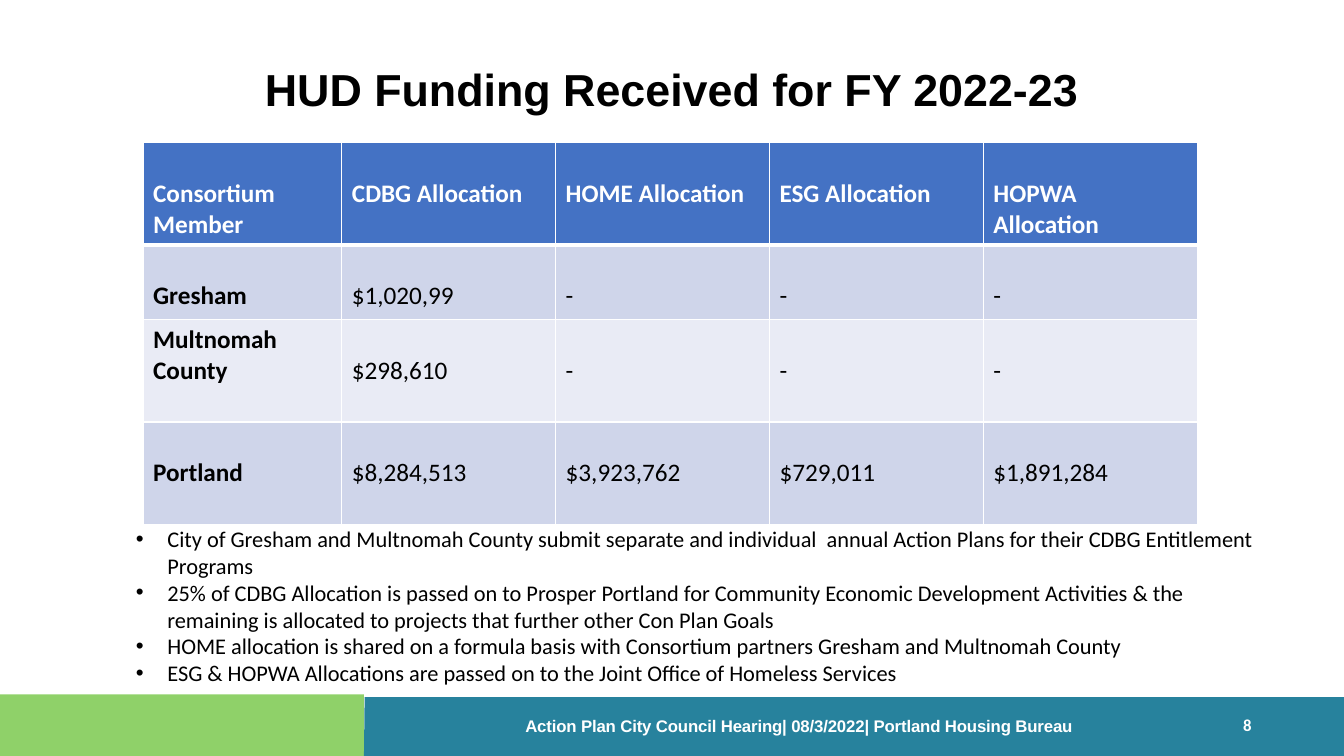
from pptx import Presentation
from pptx import util as u
from pptx.dml.color import RGBColor
from pptx.enum import shapes, text
from pptx.oxml import parse_xml
from pptx.oxml.ns import nsdecls

WHITE = RGBColor(0xFF, 0xFF, 0xFF)
BLACK = RGBColor(0x00, 0x00, 0x00)
BLUE = RGBColor(0x44, 0x72, 0xC4)
BAND_DARK = RGBColor(0xCF, 0xD5, 0xEA)
BAND_LIGHT = RGBColor(0xE9, 0xEB, 0xF5)
GREEN = RGBColor(0x8F, 0xD1, 0x69)
TEAL = RGBColor(0x27, 0x82, 0x9D)

ALLOCATIONS = [
    ["Consortium Member", "CDBG Allocation", "HOME Allocation", "ESG Allocation", "HOPWA Allocation"],
    ["Gresham", "$1,020,99", "-", "-", "-"],
    ["Multnomah County", "$298,610", "-", "-", "-"],
    ["Portland", "$8,284,513", "$3,923,762", "$729,011", "$1,891,284"],
]
ROW_FILLS = [BLUE, BAND_DARK, BAND_LIGHT, BAND_DARK]
ROW_HEIGHTS = [73, 53.5, 73, 73]
NOTES = [
    "City of Gresham and Multnomah County submit separate and individual  annual Action Plans "
    "for their CDBG Entitlement Programs",
    "25% of CDBG Allocation is passed on to Prosper Portland for Community Economic Development "
    "Activities & the remaining is allocated to projects that further other Con Plan Goals",
    "HOME allocation is shared on a formula basis with Consortium partners Gresham and Multnomah County",
    "ESG & HOPWA Allocations are passed on to the Joint Office of Homeless Services",
]


def set_all(target, values):
    """Set each named attribute of the target."""
    for name, value in values.items():
        setattr(target, name, value)


def write(para, wording, color, **font):
    """Add one formatted run to a paragraph."""
    span = para.add_run()
    span.text = wording
    set_all(span.font, font)
    span.font.color.rgb = color
    return span


def add_text_box(page, box, **frame_format):
    """Add a wrapping text box and return its frame."""
    frame = page.shapes.add_textbox(*map(u.Pt, box)).text_frame
    set_all(frame, {"word_wrap": True, **frame_format})
    return frame


def add_title(page, box):
    """Place the centred heading."""
    frame = add_text_box(page, box, vertical_anchor=text.MSO_ANCHOR.MIDDLE)
    para = frame.paragraphs[0]
    set_all(para, {"alignment": text.PP_ALIGN.CENTER, "line_spacing": 0.9})
    write(para, "HUD Funding Received for FY 2022-23", BLACK, name="Arial", size=u.Pt(32), bold=True)


def add_borders(cell, bottom):
    """Draw white borders round a cell, with the bottom width given in points."""
    for side, width in {"L": 1, "R": 1, "T": 1, "B": bottom}.items():
        cell._tc.get_or_add_tcPr().append(parse_xml(
            f'<a:ln{side} {nsdecls("a")} w="{u.Pt(width)}"><a:solidFill>'
            f'<a:srgbClr val="{WHITE}"/></a:solidFill></a:ln{side}>'))


def add_allocations(page, box):
    """Place the funding table with a narrower first column."""
    left, top, width, height = box
    first = 142
    count = len(ALLOCATIONS[0])
    table = page.shapes.add_table(len(ALLOCATIONS), count, *map(u.Pt, box)).table
    for index, column in enumerate(table.columns):
        column.width = u.Pt((width - first) / (count - 1) if index else first)
    for r, values in enumerate(ALLOCATIONS):
        table.rows[r].height = u.Pt(ROW_HEIGHTS[r])
        for c, value in enumerate(values):
            cell = table.cell(r, c)
            cell.margin_top = u.Pt(3.6 if value == "Multnomah County" else 25.6)
            add_borders(cell, 1 if r else 3)
            cell.fill.solid()
            cell.fill.fore_color.rgb = ROW_FILLS[r]
            write(cell.text_frame.paragraphs[0], value, BLACK if r else WHITE,
                  name="Calibri", size=u.Pt(18), bold=r == 0 or c == 0)


def add_notes(page, box):
    """Place the bulleted remarks."""
    frame = add_text_box(page, box)
    for index, note in enumerate(NOTES):
        para = frame.add_paragraph() if index else frame.paragraphs[0]
        write(para, note, BLACK, name="Calibri", size=u.Pt(16))
        properties = para._p.get_or_add_pPr()
        properties.set("marL", str(u.Pt(22.5)))
        properties.set("indent", str(-u.Pt(22.5)))
        properties.append(parse_xml(f'<a:buFont {nsdecls("a")} typeface="Arial"/>'))
        properties.append(parse_xml(f'<a:buChar {nsdecls("a")} char="•"/>'))


def paint(shape, color):
    """Give a shape a plain fill without line or shadow."""
    shape.shadow.inherit = False
    shape.fill.solid()
    shape.fill.fore_color.rgb = color
    shape.line.fill.background()


def add_footer(page, box):
    """Place the two colour bands, the footer wording and the page number."""
    left, top, width, height = box
    split, right, bottom = left + 260, left + width, top + height
    green = page.shapes.add_shape(shapes.MSO_SHAPE.RECTANGLE, *map(u.Pt, (left, top, 260, height)))
    paint(green, GREEN)
    corners = [(right, top + 2), (right, bottom), (split, bottom)]
    builder = page.shapes.build_freeform(u.Pt(split + 0.5), u.Pt(top + 2))
    builder.add_line_segments([(u.Pt(x), u.Pt(y)) for x, y in corners], close=True)
    paint(builder.convert_to_shape(), TEAL)

    bare = dict.fromkeys(["margin_left", "margin_top", "margin_right", "margin_bottom"], 0)
    font = {"size": u.Pt(12), "bold": True}
    para = add_text_box(page, (left + 375.2, top + 15.2, 480, 14.4), **bare).paragraphs[0]
    para.line_spacing = u.Pt(14.2)
    span = write(para, "Action Plan City Council Hearing| 08/3/2022| Portland Housing Bureau",
                 WHITE, name="Arial", **font)
    span.font._element.set("spc", "-10")
    para = add_text_box(page, (right - 72, top + 14.4, 14.4, 15), **bare).paragraphs[0]
    write(para, "8", WHITE, name="Calibri", **font)


def main():
    """Build and save the slide."""
    deck = Presentation()
    set_all(deck, {"slide_width": u.Pt(960), "slide_height": u.Pt(540)})
    page = deck.slides.add_slide(deck.slide_layouts[6])
    add_title(page, (66, 28.8, 828, 73.4))
    add_allocations(page, (102.2, 102, 753, sum(ROW_HEIGHTS)))
    add_footer(page, (0, 496, 960, 44))
    add_notes(page, (90, 371.5, 828, 124))
    deck.save("out.pptx")


if __name__ == "__main__":
    main()
